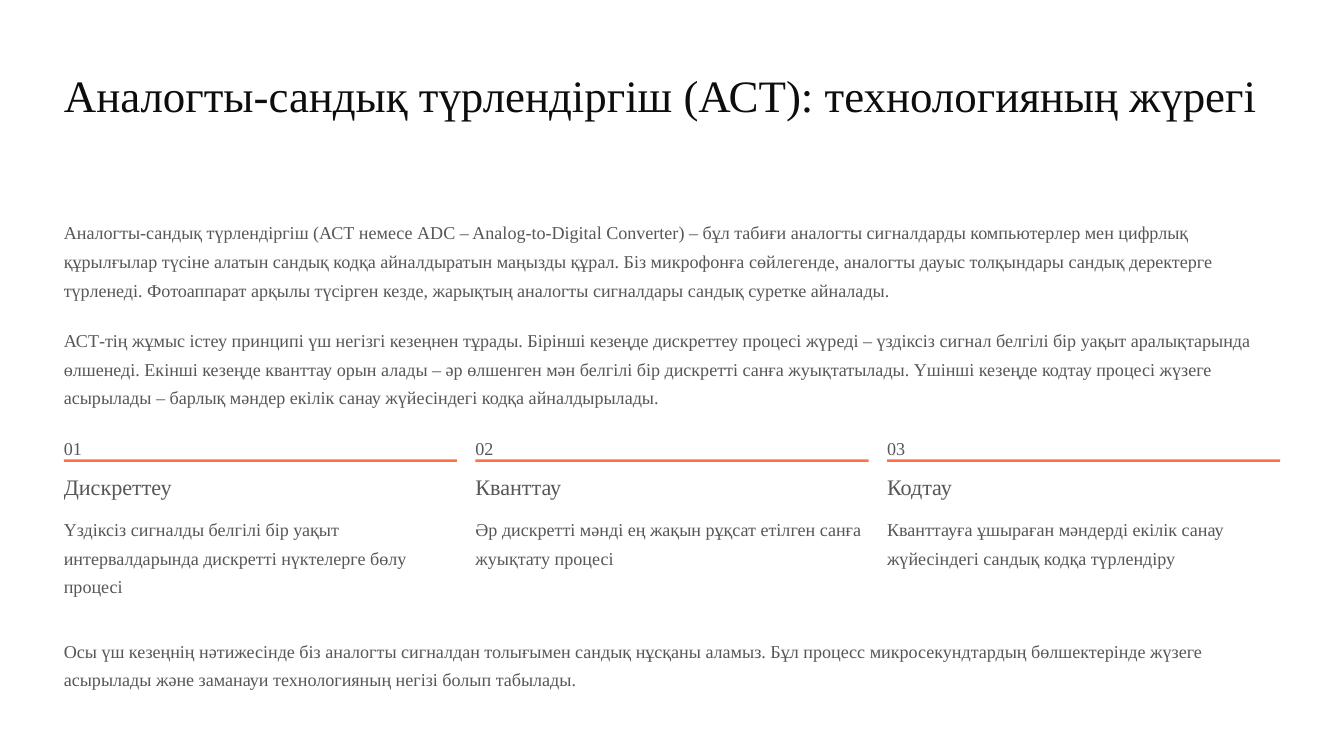
from pptx import Presentation
from pptx.dml.color import RGBColor
from pptx.enum.shapes import MSO_SHAPE
from pptx.enum.text import MSO_ANCHOR, MSO_AUTO_SIZE, PP_ALIGN
from pptx.util import Inches, Pt

RECTANGLE = MSO_SHAPE.RECTANGLE
TOP = MSO_ANCHOR.TOP
NO_FIT = MSO_AUTO_SIZE.NONE
LEFT = PP_ALIGN.LEFT

FONT = "Times New Roman"
COLORS = {"title": "0C0D0F", "body": "55575A", "accent": "FF7047", "page": "FFFFFF"}
MARGIN = 0.76
CONTENT_WIDTH = 14.48
COLUMN_WIDTH = 4.68
COLUMN_STEP = 4.9
TITLE_ONLY = 5

TITLE = "Аналогты-сандық түрлендіргіш (АСТ): технологияның жүрегі"
PARAGRAPHS = [
    (2.56, 1.04,
     "Аналогты-сандық түрлендіргіш (АСТ немесе ADC – Analog-to-Digital Converter) – бұл табиғи "
     "аналогты сигналдарды компьютерлер мен цифрлық құрылғылар түсіне алатын сандық кодқа "
     "айналдыратын маңызды құрал. Біз микрофонға сөйлегенде, аналогты дауыс толқындары сандық "
     "деректерге түрленеді. Фотоаппарат арқылы түсірген кезде, жарықтың аналогты сигналдары "
     "сандық суретке айналады."),
    (3.84, 1.04,
     "АСТ-тің жұмыс істеу принципі үш негізгі кезеңнен тұрады. Бірінші кезеңде дискреттеу "
     "процесі жүреді – үздіксіз сигнал белгілі бір уақыт аралықтарында өлшенеді. Екінші кезеңде "
     "кванттау орын алады – әр өлшенген мән белгілі бір дискретті санға жуықтатылады. Үшінші "
     "кезеңде кодтау процесі жүзеге асырылады – барлық мәндер екілік санау жүйесіндегі кодқа "
     "айналдырылады."),
    (7.54, 0.69,
     "Осы үш кезеңнің нәтижесінде біз аналогты сигналдан толығымен сандық нұсқаны аламыз. Бұл "
     "процесс микросекундтардың бөлшектерінде жүзеге асырылады және заманауи технологияның "
     "негізі болып табылады."),
]
STAGES = [
    ("Дискреттеу",
     "Үздіксіз сигналды белгілі бір уақыт интервалдарында дискретті нүктелерге бөлу процесі"),
    ("Кванттау", "Әр дискретті мәнді ең жақын рұқсат етілген санға жуықтату процесі"),
    ("Кодтау", "Кванттауға ұшыраған мәндерді екілік санау жүйесіндегі сандық кодқа түрлендіру"),
]


def write(box, text, size, spacing, color, wrap=True):
    """Fill a box with one formatted paragraph and no insets."""
    frame = box.text_frame
    frame.text = text
    frame.word_wrap = wrap
    frame.auto_size = NO_FIT
    frame.vertical_anchor = TOP
    frame.margin_left = frame.margin_right = frame.margin_top = frame.margin_bottom = 0
    para = frame.paragraphs[0]
    para.alignment = LEFT
    para.line_spacing = Pt(spacing)
    font = para.runs[0].font
    font.name = FONT
    font.size = Pt(size)
    font.color.rgb = RGBColor.from_string(COLORS[color])


def add_title(page, text):
    """Move the title placeholder into place and format it."""
    title = page.shapes.title
    title.left, title.top = Inches(MARGIN), Inches(0.77)
    title.width, title.height = Inches(CONTENT_WIDTH), Inches(1.35)
    write(title, text, 38.5, 48.5, "title")


def add_text(page, text, left, top, width, height, size=15.5, spacing=24.5, wrap=True):
    """Add a body text box."""
    box = page.shapes.add_textbox(Inches(left), Inches(top), Inches(width), Inches(height))
    write(box, text, size, spacing, "body", wrap)


def add_rule(page, left):
    """Add the accent bar under a stage number."""
    rule = page.shapes.add_shape(
        RECTANGLE, Inches(left), Inches(5.47), Inches(COLUMN_WIDTH), Inches(0.03))
    rule.shadow.inherit = False
    rule.fill.solid()
    rule.fill.fore_color.rgb = RGBColor.from_string(COLORS["accent"])
    rule.line.fill.background()


def add_stage(page, index, heading, description):
    """Add one numbered stage column."""
    left = MARGIN + index * COLUMN_STEP
    add_text(page, f"{index + 1:02d}", left, 5.12, 0.22, 0.27, wrap=False)
    add_rule(page, left)
    add_text(page, heading, left, 5.62, 2.71, 0.34, size=19, spacing=24, wrap=False)
    add_text(page, description, left, 6.09, COLUMN_WIDTH, 1.04)


def main():
    """Build and save the slide."""
    deck = Presentation()
    deck.slide_width, deck.slide_height = Inches(16), Inches(9)
    page = deck.slides.add_slide(deck.slide_layouts[TITLE_ONLY])
    page.background.fill.solid()
    page.background.fill.fore_color.rgb = RGBColor.from_string(COLORS["page"])
    add_title(page, TITLE)
    for top, height, text in PARAGRAPHS:
        add_text(page, text, MARGIN, top, CONTENT_WIDTH, height)
    for index, (heading, description) in enumerate(STAGES):
        add_stage(page, index, heading, description)
    deck.save("out.pptx")


if __name__ == "__main__":
    main()
